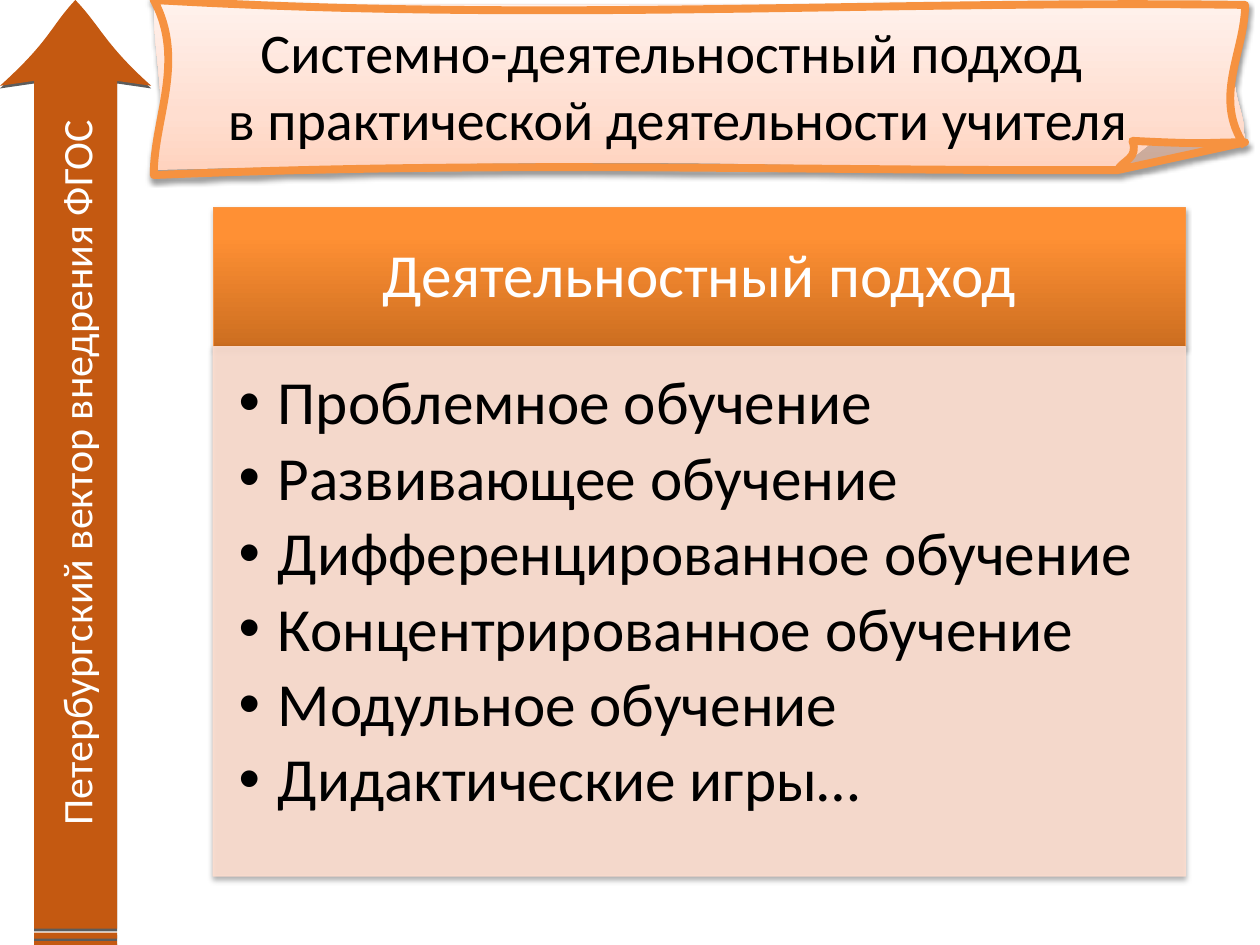
from lxml import etree
from pptx import Presentation, util as u
from pptx.dml.color import RGBColor
from pptx.enum import shapes, text
from pptx.oxml.ns import qn

FONT = "Calibri"
METHODS = [
    "Проблемное обучение",
    "Развивающее обучение",
    "Дифференцированное обучение",
    "Концентрированное обучение",
    "Модульное обучение",
    "Дидактические игры…",
]

# Outlines in cm: a pair is a corner, six numbers are a Bezier curve
PAPER = [
    (3.1, 0.1), (25.1, 0.1),
    (24.59, 1.9, 25.1, 1.96, 25.1, 2.87),
    (23.52, 3.07, 24.05, 3.23, 22.53, 3.43),
    (16.05, 3.43, 15.8, 3.1, 3.1, 3.43),
    (3.43, 2.29, 3.1, 1.22, 3.1, 0.1),
]
FOLD = [(22.53, 3.43), (23.29, 2.84), (25.1, 2.87), (22.53, 3.43)]
EDGE = [
    (22.53, 3.43),
    (22.63, 3.23, 22.96, 3.2, 22.83, 2.84),
    (24.36, 2.92, 24.33, 2.87, 25.1, 2.87),
    (22.53, 3.43),
    (16.05, 3.45, 10.13, 3.23, 3.1, 3.53),
    (3.1, 2.39, 3.76, 1.22, 3.1, 0),
    (10.95, 0.46, 17.75, 0, 25.1, 0.1),
    (25.1, 1.04, 24.43, 1.98, 25.1, 2.95),
]
# The arrow is drawn pointing right, then turned upwards
SHAFT_TOP, SHAFT_BOTTOM = 0.69, 2.36
ARROW_HEAD = [
    (0.33, SHAFT_TOP), (17.42, SHAFT_TOP), (17.32, 0),
    (18.24, 1.02, 18.52, 1.02, 19.05, 1.52),
    (18.52, 2.03, 18.16, 2.11, 17.32, 3.05),
    (17.42, SHAFT_BOTTOM), (0.33, SHAFT_BOTTOM), (0.33, SHAFT_TOP),
]


def color(value):
    return RGBColor.from_string(value)


def add_outline(slide, left, top, width, height, paths, origin=(0, 0)):
    """paths: list of (contours, closed, path attributes); origin: zero point of the contours."""
    right, bottom = u.Cm(width), u.Cm(height)
    builder = slide.shapes.build_freeform(0, 0, scale=1.0)
    builder.add_line_segments([(right, 0), (right, bottom), (0, bottom)])
    shape = builder.convert_to_shape(u.Cm(left), u.Cm(top))
    path_list = shape.element.spPr.find(".//" + qn("a:pathLst"))
    path_list.remove(path_list[0])
    for contours, closed, attributes in paths:
        path = etree.SubElement(path_list, qn("a:path"), w=str(right), h=str(bottom), **attributes)
        for contour in contours:
            for number, part in enumerate(contour):
                kind = "cubicBezTo" if len(part) == 6 else "lnTo" if number else "moveTo"
                command = etree.SubElement(path, qn("a:" + kind))
                for x, y in zip(part[::2], part[1::2]):
                    etree.SubElement(command, qn("a:pt"),
                                     x=str(u.Cm(x - origin[0])), y=str(u.Cm(y - origin[1])))
            if closed:
                etree.SubElement(path, qn("a:close"))
    return shape


def paint(shape, fill, alpha=None, line=None, width=0.75, shadow=None):
    """fill: hex or list of (position, hex); shadow: (alpha, blur pt, distance pt)."""
    if isinstance(fill, str):
        shape.fill.solid()
        shape.fill.fore_color.rgb = color(fill)
    else:
        shape.fill.gradient()
        shape.fill.gradient_angle = 90
        stops = shape.element.spPr.find(".//" + qn("a:gsLst"))
        for stop in list(stops):
            stops.remove(stop)
        for position, value in fill:
            stop = etree.SubElement(stops, qn("a:gs"), pos=str(position * 1000))
            etree.SubElement(stop, qn("a:srgbClr"), val=value)
    if line:
        shape.line.color.rgb = color(line)
        shape.line.width = u.Pt(width)
    else:
        shape.line.fill.background()
    if alpha:
        for tone in shape.element.spPr.iter(qn("a:srgbClr")):
            etree.SubElement(tone, qn("a:alpha"), val=str(alpha * 1000))
    shape.shadow.inherit = False
    if shadow:
        opacity, blur, distance = shadow
        effects = shape.element.spPr.find(qn("a:effectLst"))
        outer = etree.SubElement(
            effects, qn("a:outerShdw"), blurRad=str(u.Pt(blur)),
            dist=str(u.Pt(distance)), dir="5400000", rotWithShape="0")
        tone = etree.SubElement(outer, qn("a:srgbClr"), val="000000")
        etree.SubElement(tone, qn("a:alpha"), val=str(opacity * 1000))


def write(shape, paragraphs, size, ink="000000", align=text.PP_ALIGN.CENTER,
          anchor=text.MSO_ANCHOR.MIDDLE, insets=None, spacing=1.0, after=0, bullet_indent=None):
    """Each paragraph is a list of lines."""
    frame = shape.text_frame
    frame.word_wrap = True
    frame.auto_size = text.MSO_AUTO_SIZE.NONE
    frame.vertical_anchor = anchor
    if insets:
        (frame.margin_left, frame.margin_top,
         frame.margin_right, frame.margin_bottom) = [u.Cm(inset) for inset in insets]
    for number, lines in enumerate(paragraphs):
        para = frame.add_paragraph() if number else frame.paragraphs[0]
        para.alignment = align
        para.line_spacing = spacing
        para.space_before, para.space_after = u.Pt(0), u.Pt(after)
        for row, words in enumerate(lines):
            if row:
                para.add_line_break()
            run = para.add_run()
            run.text = words
            run.font.name, run.font.size = FONT, u.Pt(size)
            run.font.color.rgb = color(ink)
        if bullet_indent:
            props = para._p.get_or_add_pPr()
            props.set("marL", str(u.Cm(bullet_indent)))
            props.set("indent", str(-u.Cm(bullet_indent)))
            etree.SubElement(props, qn("a:buChar"), char="•")


def place(shape, left, top, width, height):
    shape.left, shape.top, shape.width, shape.height = map(u.Cm, (left, top, width, height))
    # Bring the placeholder in front of what is already drawn
    shape.element.getparent().append(shape.element)


def add_box(slide, left, top, width, height, **look):
    box = slide.shapes.add_shape(
        shapes.MSO_SHAPE.RECTANGLE, *map(u.Cm, (left, top, width, height)))
    paint(box, shadow=(35, 3.1, 1.8), **look)
    return box


def add_scroll(slide):
    scroll = add_outline(slide, 3.1, 0, 22, 3.53, [
        ([PAPER], True, {"stroke": "0"}),
        ([FOLD], True, {"fill": "darkenLess", "stroke": "0"}),
        ([EDGE], False, {"fill": "none"}),
    ], origin=(3.1, 0))
    paint(scroll, [(0, "FFD2BD"), (35, "FFDED0"), (100, "FFF2ED")],
          line="F69240", width=4.5, shadow=(38, 3.1, 1.6))


def add_vector_arrow(slide):
    stripes = [[(start, SHAFT_TOP), (start, SHAFT_BOTTOM), (end, SHAFT_BOTTOM),
                (end, SHAFT_TOP), (start, SHAFT_TOP)]
               for start, end in ((0, 0.08), (0.13, 0.25))]
    arrow = add_outline(slide, -8, 8, 19.05, 3.05, [([*stripes, ARROW_HEAD], True, {})])
    arrow.rotation = 270
    paint(arrow, "C45911", shadow=(63, 0, 1.5))
    write(arrow, [["Петербургский вектор внедрения ФГОС"]], 24, ink="FFFFFF")


def main():
    deck = Presentation()
    deck.slide_width, deck.slide_height = u.Cm(25.4), u.Cm(19.05)
    slide = deck.slides.add_slide(deck.slide_layouts[1])
    title, methods = slide.placeholders

    # Title on the scroll
    add_scroll(slide)
    place(title, 2.24, 0.12, 22.86, 3.18)
    write(title, [["Системно-деятельностный подход ",
                   "в практической деятельности учителя"]], 32)

    # Vertical arrow
    add_vector_arrow(slide)

    # Heading band and list panel
    left, top, width, band, panel = 4.3, 4.19, 19.6, 2.8, 10.67
    heading = add_box(slide, left, top, width, band, line="F79646",
                      fill=[(0, "CC6E20"), (80, "FF9034"), (100, "FF9136")])
    write(heading, [["Деятельностный подход"]], 35, ink="FFFFFF",
          insets=(0.69, 0.41, 0.69, 0.41), spacing=0.9)
    add_box(slide, left, top + band, width, panel, fill="FCDDCF", line="FCDDCF", alpha=90)
    place(methods, left, top + band, width, panel)
    write(methods, [[method] for method in METHODS], 35, align=text.PP_ALIGN.LEFT,
          anchor=text.MSO_ANCHOR.TOP, insets=(0.51, 0.51, 0.69, 0.79),
          spacing=0.9, after=5.25, bullet_indent=0.79)

    deck.save("out.pptx")


if __name__ == "__main__":
    main()
